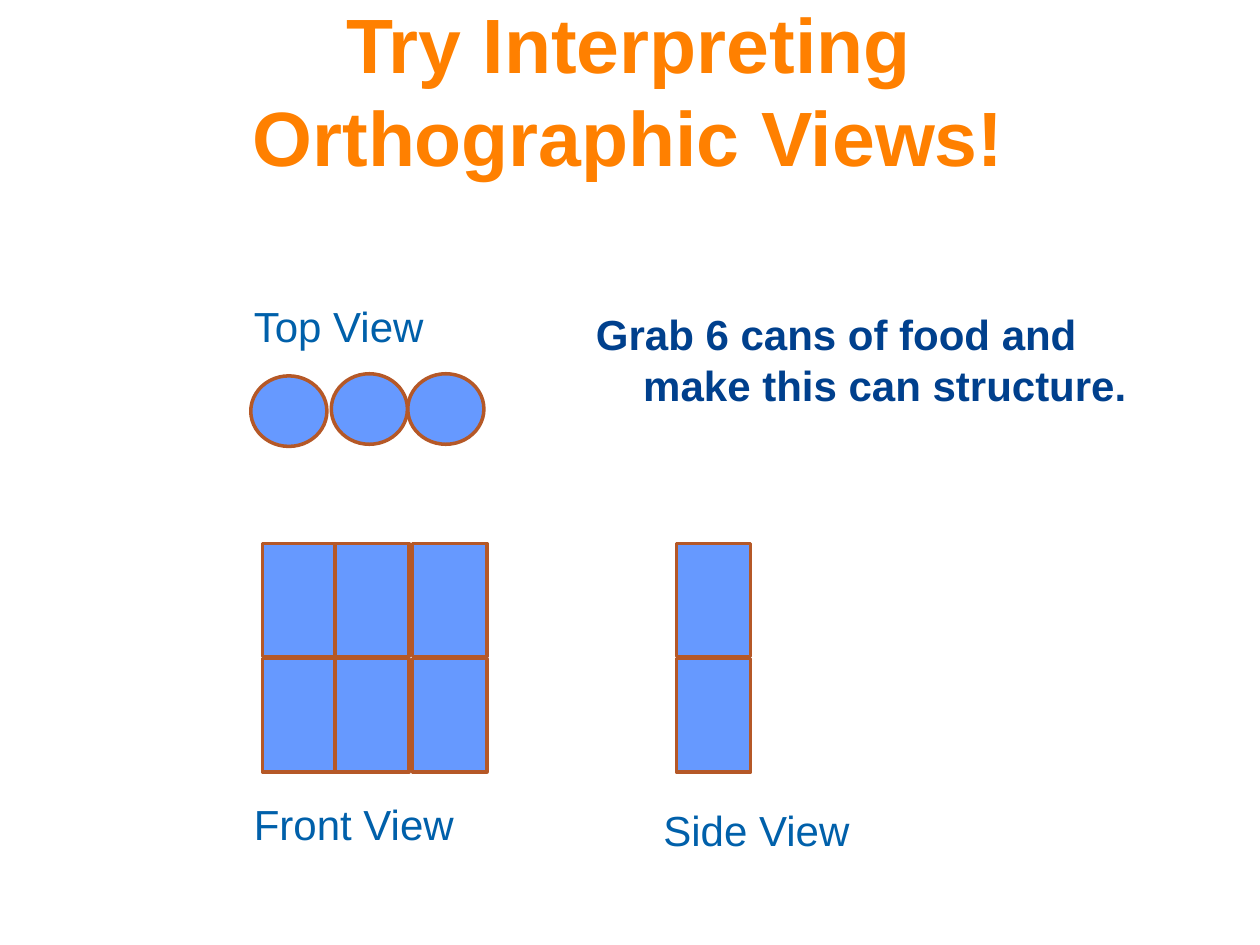
from dataclasses import dataclass

from pptx import Presentation
from pptx.dml.color import RGBColor
from pptx.enum.shapes import MSO_SHAPE as SHAPE
from pptx.enum.text import MSO_ANCHOR as ANCHOR, MSO_AUTO_SIZE as AUTOSIZE, PP_ALIGN as ALIGN
from pptx.util import Pt


@dataclass(frozen=True)
class Theme:
    font: str = "Arial"
    title_color: str = "FF8000"
    task_color: str = "00408D"
    label_color: str = "0060AA"
    can_fill: str = "6699FF"
    can_line: str = "B55827"
    line_width: float = 2
    title_size: float = 44
    body_size: float = 24


class SlideBuilder:
    def __init__(self, slide, theme):
        self.slide = slide
        self.theme = theme

    def add_run(self, p, text, size, color, bold=False):
        r = p.add_run()
        r.text = text
        r.font.name = self.theme.font
        r.font.size = Pt(size)
        r.font.bold = bold
        r.font.color.rgb = RGBColor.from_string(color)

    def title(self, text, x, y, w, h):
        sp = self.slide.shapes.title
        sp.left, sp.top, sp.width, sp.height = Pt(x), Pt(y), Pt(w), Pt(h)
        tf = sp.text_frame
        tf.auto_size = AUTOSIZE.NONE
        tf.vertical_anchor = ANCHOR.MIDDLE
        p = tf.paragraphs[0]
        p.alignment = ALIGN.CENTER
        self.add_run(p, text, self.theme.title_size, self.theme.title_color, bold=True)

    def text_box(self, x, y, w, h, auto_size):
        tf = self.slide.shapes.add_textbox(Pt(x), Pt(y), Pt(w), Pt(h)).text_frame
        tf.word_wrap = True
        tf.auto_size = auto_size
        return tf.paragraphs[0]

    def task(self, text, x, y, w, h, hanging):
        """Add a bold instruction whose wrapped lines are indented."""
        p = self.text_box(x, y, w, h, AUTOSIZE.NONE)
        pPr = p._p.get_or_add_pPr()
        pPr.set("marL", str(Pt(hanging)))
        pPr.set("indent", str(-Pt(hanging)))
        self.add_run(p, text, self.theme.body_size, self.theme.task_color, bold=True)

    def label(self, text, x, y, w=155.5, h=36):
        p = self.text_box(x, y, w, h, AUTOSIZE.SHAPE_TO_FIT_TEXT)
        self.add_run(p, text, self.theme.body_size, self.theme.label_color)

    def can(self, shapes, kind, x, y, w, h):
        sp = shapes.add_shape(kind, Pt(x), Pt(y), Pt(w), Pt(h))
        sp.shadow.inherit = False
        sp.fill.solid()
        sp.fill.fore_color.rgb = RGBColor.from_string(self.theme.can_fill)
        sp.line.color.rgb = RGBColor.from_string(self.theme.can_line)
        sp.line.width = Pt(self.theme.line_width)

    def can_stack(self, columns, rows, w=42.5, h=64.8):
        """Group upright cans, one at each crossing of the columns and rows."""
        group = self.slide.shapes.add_group_shape()
        for y in rows:
            for x in columns:
                self.can(group.shapes, SHAPE.RECTANGLE, x, y, w, h)


def main():
    prs = Presentation()
    prs.slide_width, prs.slide_height = Pt(720), Pt(540)
    s = prs.slides.add_slide(prs.slide_layouts[5])
    builder = SlideBuilder(s, Theme())

    builder.title("Try Interpreting Orthographic Views!", 53.3, 0, 612, 102)
    builder.task("Grab 6 cans of food and make this can structure.",
                 333.5, 173, 332.5, 34, hanging=27)

    for x, y in ((143.3, 214.8), (233, 213.6), (189.3, 213.6)):
        builder.can(s.shapes, SHAPE.OVAL, x, y, 43.5, 40.3)

    rows = (310.5, 376.4)
    builder.can_stack((150, 191.3, 235.7), rows)
    builder.can_stack((386.5,), rows)

    builder.label("Top View", 138, 168)
    builder.label("Side View", 372, 456)
    builder.label("Front View", 138, 453)

    prs.save("out.pptx")


if __name__ == "__main__":
    main()
